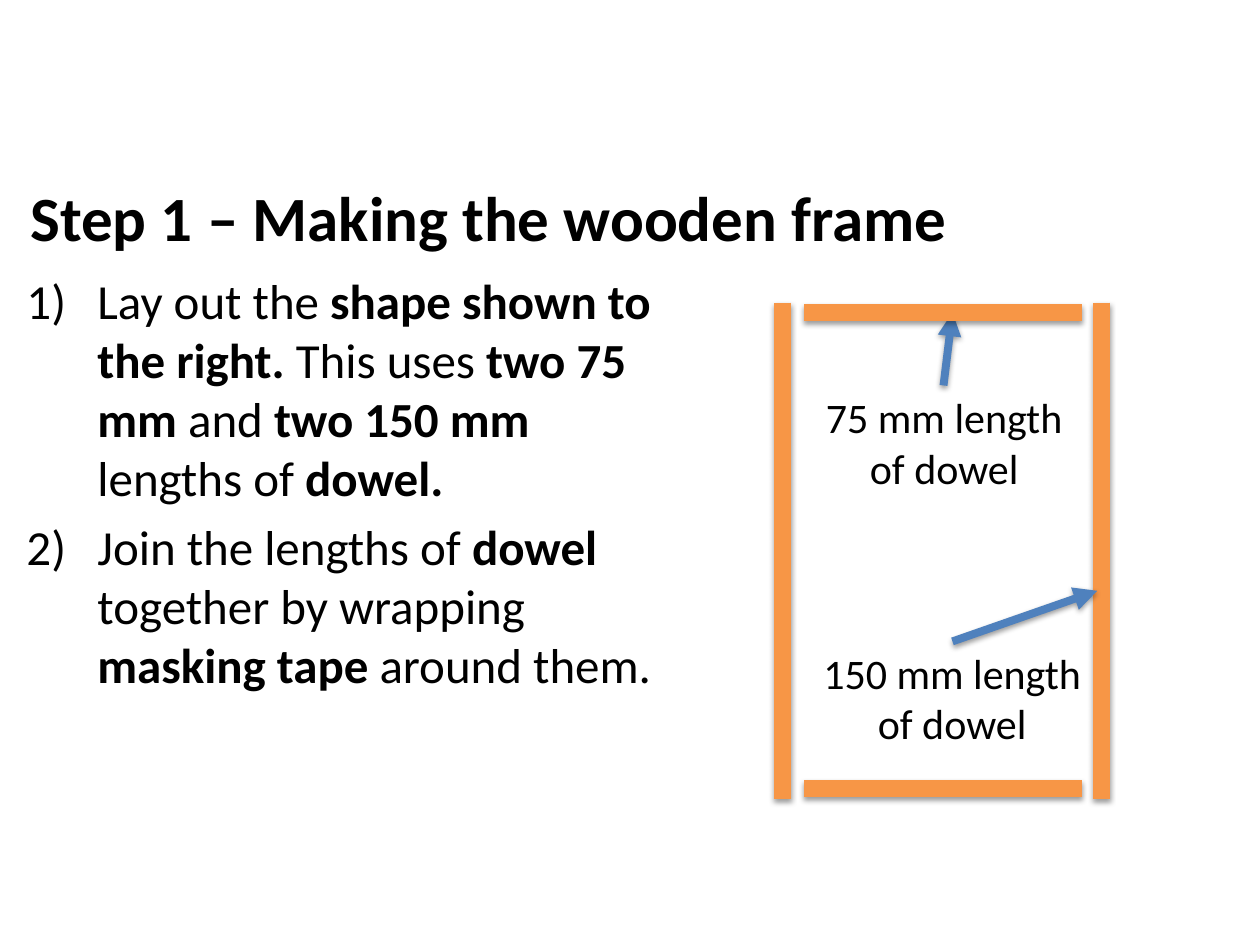
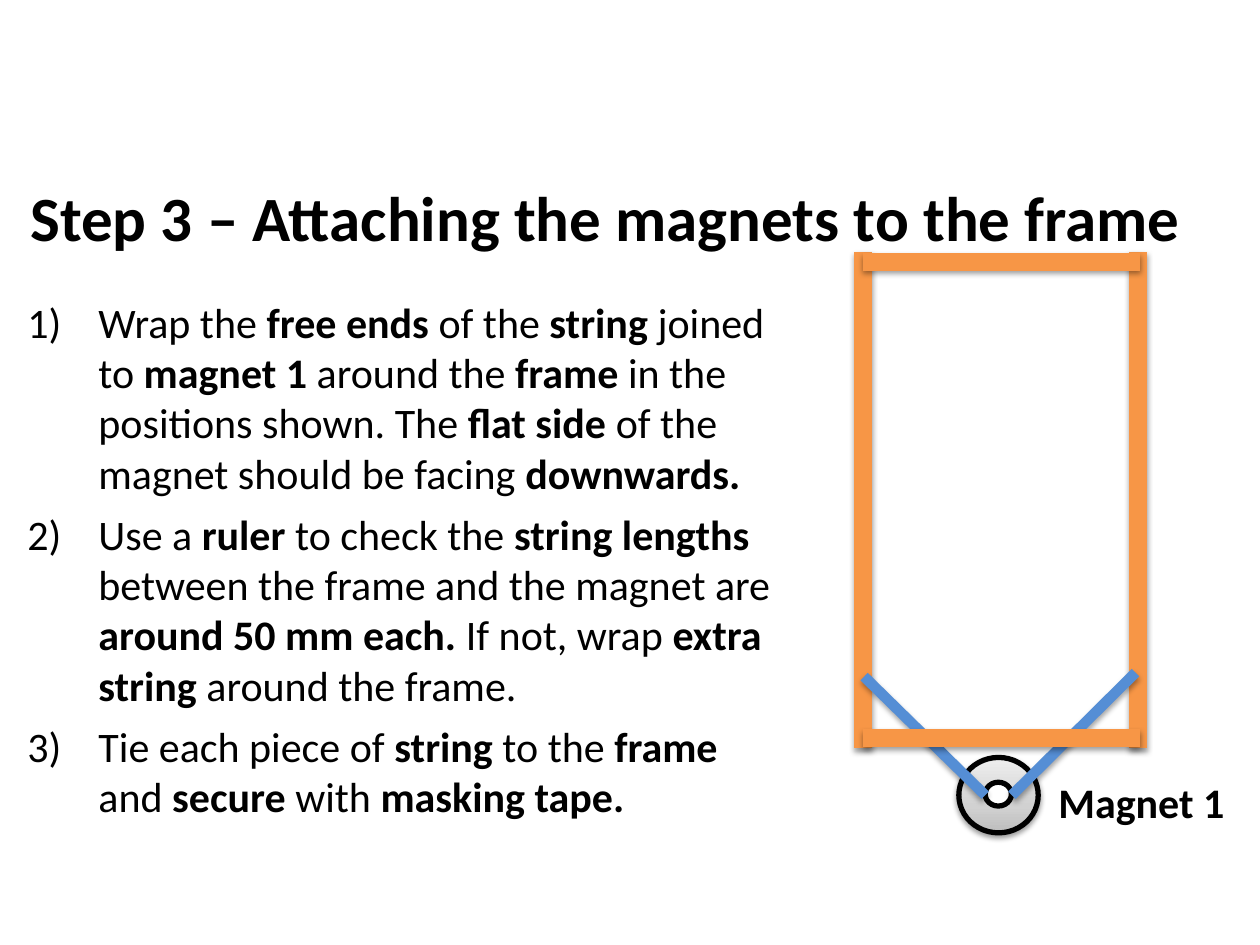
from copy import deepcopy
from dataclasses import dataclass

from lxml.etree import SubElement
from pptx import Presentation
from pptx.dml.color import RGBColor
from pptx.enum.shapes import MSO_CONNECTOR, MSO_SHAPE
from pptx.enum.text import MSO_ANCHOR, MSO_AUTO_SIZE, PP_ALIGN
from pptx.oxml.ns import qn
from pptx.util import Cm, Pt


@dataclass(frozen=True)
class Theme:
    font: str = "Calibri"
    ink: str = "000000"
    paper: str = "FFFFFF"
    wood: str = "F79646"
    arrow: str = "4F81BD"
    string: str = "558ED5"
    metal: tuple = ((0, "BDBDBD"), (0.35, "D1D1D1"), (1, "EEEEEE"))
    head: int = 36
    large: int = 28
    small: int = 24
    dowel: int = 10


def rgb(code):
    return RGBColor.from_string(code)


def write(para, text, size, font, color, bold=False, align=PP_ALIGN.LEFT, after=0):
    """Fill a paragraph; parts between asterisks are bold."""
    para.alignment = align
    para.space_before, para.space_after = Pt(0), Pt(after)
    for i, part in enumerate(text.split("*")):
        if part:
            run = para.add_run()
            run.text = part
            run.font.name, run.font.size = font, Pt(size)
            run.font.bold = bold or i % 2 == 1
            run.font.color.rgb = rgb(color)


def shade(shape, alpha, dist=20000):
    """Set a soft drop shadow; an alpha of 0 gives none."""
    effects = SubElement(shape.element.spPr, qn("a:effectLst"))
    if alpha:
        drop = SubElement(effects, qn("a:outerShdw"), blurRad="40000",
                          dist=str(dist), dir="5400000", rotWithShape="0")
        color = SubElement(drop, qn("a:srgbClr"), val="000000")
        SubElement(color, qn("a:alpha"), val=str(alpha * 1000))


def number(para, indent):
    props = para._p.get_or_add_pPr()
    props.set("marL", str(indent))
    props.set("indent", str(-indent))
    SubElement(props, qn("a:buFont"), typeface="+mj-lt")
    SubElement(props, qn("a:buAutoNum"), type="arabicParenR")


class Deck:
    def __init__(self, theme):
        self.theme = theme
        self.show = Presentation()
        self.show.slide_width, self.show.slide_height = Cm(25.4), Cm(19.05)
        self.slide = None

    def place(self, shape, box):
        shape.left, shape.top, shape.width, shape.height = map(Cm, box)
        frame = shape.text_frame
        frame.word_wrap = True
        frame.auto_size = MSO_AUTO_SIZE.NONE
        frame.vertical_anchor = MSO_ANCHOR.TOP
        return frame

    def text(self, para, text, size, **form):
        write(para, text, size, self.theme.font, self.theme.ink, **form)

    def page(self, title):
        self.slide = self.show.slides.add_slide(self.show.slide_layouts[1])
        frame = self.place(self.slide.shapes.title, (0.36, 3.48, 24.36, 1.8))
        self.text(frame.paragraphs[0], title, self.theme.head, bold=True)

    def steps(self, items, box, size):
        frame = self.place(self.slide.placeholders[1], box)
        for i, item in enumerate(items):
            para = frame.add_paragraph() if i else frame.paragraphs[0]
            number(para, Cm(1.43))
            self.text(para, item, size, after=6)

    def label(self, text, box, bold=False):
        frame = self.place(self.slide.shapes.add_textbox(0, 0, 0, 0), box)
        self.text(frame.paragraphs[0], text, self.theme.small,
                  bold=bold, align=PP_ALIGN.CENTER)

    def line(self, start, end, color, width, alpha=38, dist=20000, head=False):
        line = self.slide.shapes.add_connector(
            MSO_CONNECTOR.STRAIGHT, *map(Cm, (*start, *end)))
        line.line.color.rgb = rgb(color)
        line.line.width = Pt(width)
        if head:
            SubElement(line.element.spPr.find(qn("a:ln")),
                       qn("a:tailEnd"), type="triangle")
        shade(line, alpha, dist)

    def arrow(self, start, end):
        self.line(start, end, self.theme.arrow, 4.5, head=True)

    def string(self, start, end):
        self.line(start, end, self.theme.string, 6, alpha=35, dist=23000)

    def posts(self, top, *places):
        """Draw the two long dowels."""
        for x in places:
            self.line((x, top), (x, top + 10), self.theme.wood, self.theme.dowel)

    def rails(self, top, left, right):
        """Draw the two short dowels just inside the ends of the posts."""
        for y in (top + 0.2, top + 9.8):
            self.line((left, y), (right, y), self.theme.wood, self.theme.dowel)

    def disc(self, box):
        disc = self.slide.shapes.add_shape(MSO_SHAPE.OVAL, *map(Cm, box))
        disc.line.color.rgb = rgb(self.theme.ink)
        disc.line.width = Pt(3)
        return disc

    def magnet(self):
        ring = self.disc((19.33, 15.27, 1.6, 1.52))
        ring.fill.gradient()
        ring.fill.gradient_angle = 90
        stops = ring.element.spPr.find(".//" + qn("a:gsLst"))
        stops.insert(1, deepcopy(stops[0]))
        for stop, (place, color) in zip(ring.fill.gradient_stops, self.theme.metal):
            stop.position = place
            stop.color.rgb = rgb(color)
        shade(ring, 38)
        hole = self.disc((19.86, 15.77, 0.53, 0.48))
        hole.fill.solid()
        hole.fill.fore_color.rgb = rgb(self.theme.paper)
        shade(hole, 0)


def build_frame(deck):
    deck.page("Step 1 – Making the wooden frame")
    deck.steps([
        "Lay out the *shape shown to the right. *This uses *two 75 mm *and "
        "*two 150 mm *lengths of *dowel.*",
        "Join the lengths of *dowel* together by wrapping *masking tape *around them.",
    ], (0.28, 5.33, 13.39, 11.66), deck.theme.large)
    deck.label("150 mm length of dowel", (16.26, 12.93, 5.87, 2.31))
    deck.label("75 mm length of dowel", (16.1, 7.77, 5.87, 2.31))
    deck.arrow((19.02, 7.77), (19.2, 6.3))
    deck.rails(6.1, 16.21, 21.82)
    deck.posts(6.1, 15.77, 22.2)
    deck.arrow((19.2, 12.93), (22.12, 11.91))


def hang_magnet(deck):
    deck.page("Step 3 – Attaching the magnets to the frame")
    deck.steps([
        "Wrap the *free ends *of the *string* joined to *magnet 1 *around the "
        "*frame* in the positions shown. The *flat side *of the magnet should "
        "be facing *downwards.*",
        "Use a *ruler* to check the *string lengths *between the frame and the "
        "magnet are *around 50 mm each.* If not, wrap *extra string *around the frame.",
        "Tie each piece of *string* to the *frame* and *secure* with *masking tape.*",
    ], (0.3, 5.84, 15.52, 10.95), deck.theme.small)
    deck.label("Magnet 1", (20.9, 15.52, 4.22, 1.27), bold=True)
    deck.posts(5.08, 22.94, 17.4)
    deck.magnet()
    deck.string((20.4, 16.03), (22.89, 13.56))
    deck.string((19.86, 16.03), (17.42, 13.64))
    deck.rails(5.08, 17.4, 22.99)


def main():
    deck = Deck(Theme())
    build_frame(deck)
    hang_magnet(deck)
    deck.show.save("out.pptx")


if __name__ == "__main__":
    main()
